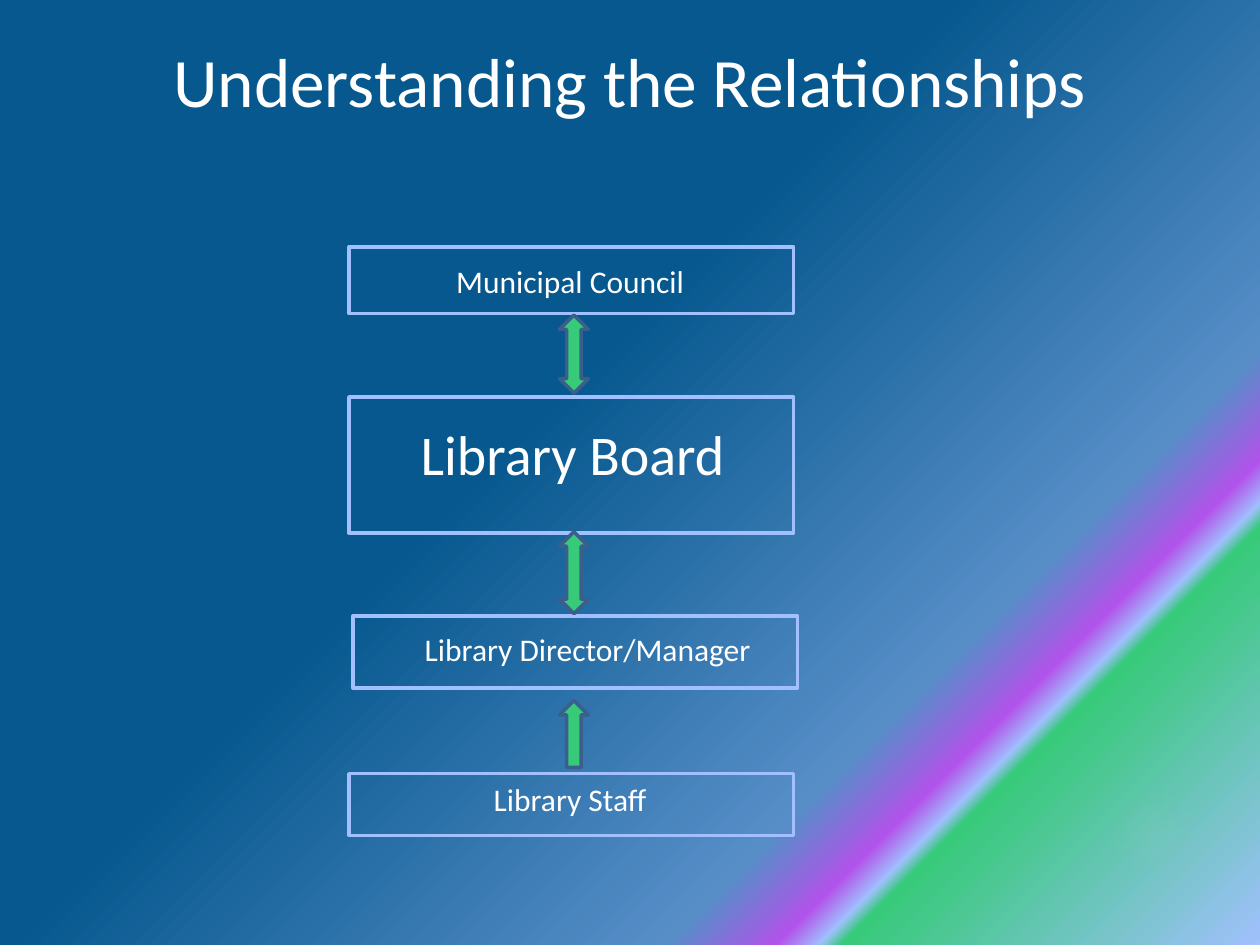
from lxml import etree
from pptx import Presentation
from pptx.dml.color import RGBColor
from pptx.enum.shapes import MSO_SHAPE
from pptx.enum.text import MSO_ANCHOR, PP_ALIGN
from pptx.oxml import parse_xml
from pptx.oxml.ns import qn
from pptx.util import Inches, Pt

RECTANGLE, ELLIPSE = MSO_SHAPE.RECTANGLE, MSO_SHAPE.OVAL
TWO_WAY, UPWARD = MSO_SHAPE.UP_DOWN_ARROW, MSO_SHAPE.UP_ARROW
CENTER, TOP = PP_ALIGN.CENTER, MSO_ANCHOR.TOP

WHITE = RGBColor(0xFF, 0xFF, 0xFF)
PERIWINKLE = RGBColor(0xA1, 0xC0, 0xFD)
GREEN = RGBColor(0x36, 0xCA, 0x79)
PURPLE = RGBColor(0xB1, 0x53, 0xEB)
MID_BLUE = RGBColor(0x57, 0x8E, 0xC8)
DEEP_BLUE = RGBColor(0x06, 0x58, 0x8E)
ARROW_EDGE = RGBColor(0x3A, 0x5F, 0x8C)
FONT = "Calibri"

TITLE = "Understanding the Relationships"

# Position in percent, colour, opacity in percent
BACKGROUND = [
    (0, PERIWINKLE, 100), (19, GREEN, 55), (20, PERIWINKLE, 100),
    (22, PURPLE, 86), (27, MID_BLUE, 100), (57, DEEP_BLUE, 100),
]

# Label, text size, frame (left, top, height), label box (left, top, width, height)
LEVELS = [
    ("Municipal Council", 18, (2.77, 1.96, 0.53), (2.77, 2.03, 3.51, 0.4)),
    ("Library Board", 32, (2.77, 3.15, 1.08), (2.79, 3.28, 3.51, 0.64)),
    ("Library Director/Manager", 18, (2.8, 4.89, 0.57), (3.05, 4.95, 3.23, 0.4)),
    ("Library Staff", 18, (2.77, 6.14, 0.49), (2.76, 6.14, 3.53, 0.4)),
]
FRAME_WIDTH = 3.53

# Arrow kind, top, height
ARROWS = [(TWO_WAY, 2.5, 0.62), (TWO_WAY, 4.22, 0.65), (UPWARD, 5.56, 0.53)]
ARROW_LEFT, ARROW_WIDTH = 4.44, 0.23


def paint_background(page):
    """Spread the colour stops from the lower right corner."""
    page.background.fill.gradient()
    gradient = page.background._cSld.find(".//" + qn("a:gradFill"))
    stops = "".join(
        f'<a:gs pos="{position * 1000}"><a:srgbClr val="{color}">'
        f'<a:alpha val="{opacity * 1000}"/></a:srgbClr></a:gs>'
        for position, color, opacity in BACKGROUND
    )
    new_gradient = parse_xml(
        '<a:gradFill xmlns:a="http://schemas.openxmlformats.org/drawingml/2006/main"'
        f' rotWithShape="1"><a:gsLst>{stops}</a:gsLst><a:path path="circle">'
        '<a:fillToRect l="100000" t="100000"/></a:path></a:gradFill>'
    )
    gradient.getparent().replace(gradient, new_gradient)


def add_shape(page, kind, bounds, fill=None, line=None):
    shape = page.shapes.add_shape(kind, *map(Inches, bounds))
    shape.shadow.inherit = False
    if fill is None:
        shape.fill.background()
    else:
        shape.fill.solid()
        shape.fill.fore_color.rgb = fill
    if line is None:
        shape.line.fill.background()
    else:
        shape.line.color.rgb = line
        shape.line.width = Pt(2)
    return shape


def add_text(page, text, bounds, size=18, color=WHITE, margin_top=0.05):
    box = page.shapes.add_textbox(*map(Inches, bounds))
    frame = box.text_frame
    frame.word_wrap = True
    frame.vertical_anchor = TOP
    frame.margin_top = Inches(margin_top)
    para = frame.paragraphs[0]
    para.alignment = CENTER
    span = para.add_run()
    span.text = text
    span.font.name, span.font.size = FONT, Pt(size)
    span.font.color.rgb = color


def add_glow(page):
    """Translucent white spot with a soft edge."""
    glow = add_shape(page, ELLIPSE, (8.47, 5.93, 1.35, 1.34), fill=WHITE)
    properties = glow._element.spPr
    color = properties.find(".//" + qn("a:srgbClr"))
    etree.SubElement(color, qn("a:alpha"), val="70000")
    effects = properties.find(qn("a:effectLst"))
    etree.SubElement(effects, qn("a:softEdge"), rad=str(Inches(0.44)))


def main():
    deck = Presentation()
    deck.slide_width, deck.slide_height = Inches(10), Inches(7.5)
    page = deck.slides.add_slide(deck.slide_layouts[6])
    paint_background(page)
    add_glow(page)

    # Frames and their labels
    for label, size, (left, top, height), label_bounds in LEVELS:
        add_shape(page, RECTANGLE, (left, top, FRAME_WIDTH, height), line=PERIWINKLE)
        add_text(page, label, label_bounds, size=size)

    # Arrows between the levels
    for kind, top, height in ARROWS:
        add_shape(page, kind, (ARROW_LEFT, top, ARROW_WIDTH, height),
                  fill=GREEN, line=ARROW_EDGE)

    add_text(page, TITLE, (0.5, 0.3, 9, 1.25), size=39.6, margin_top=0)
    deck.save("out.pptx")


if __name__ == "__main__":
    main()
